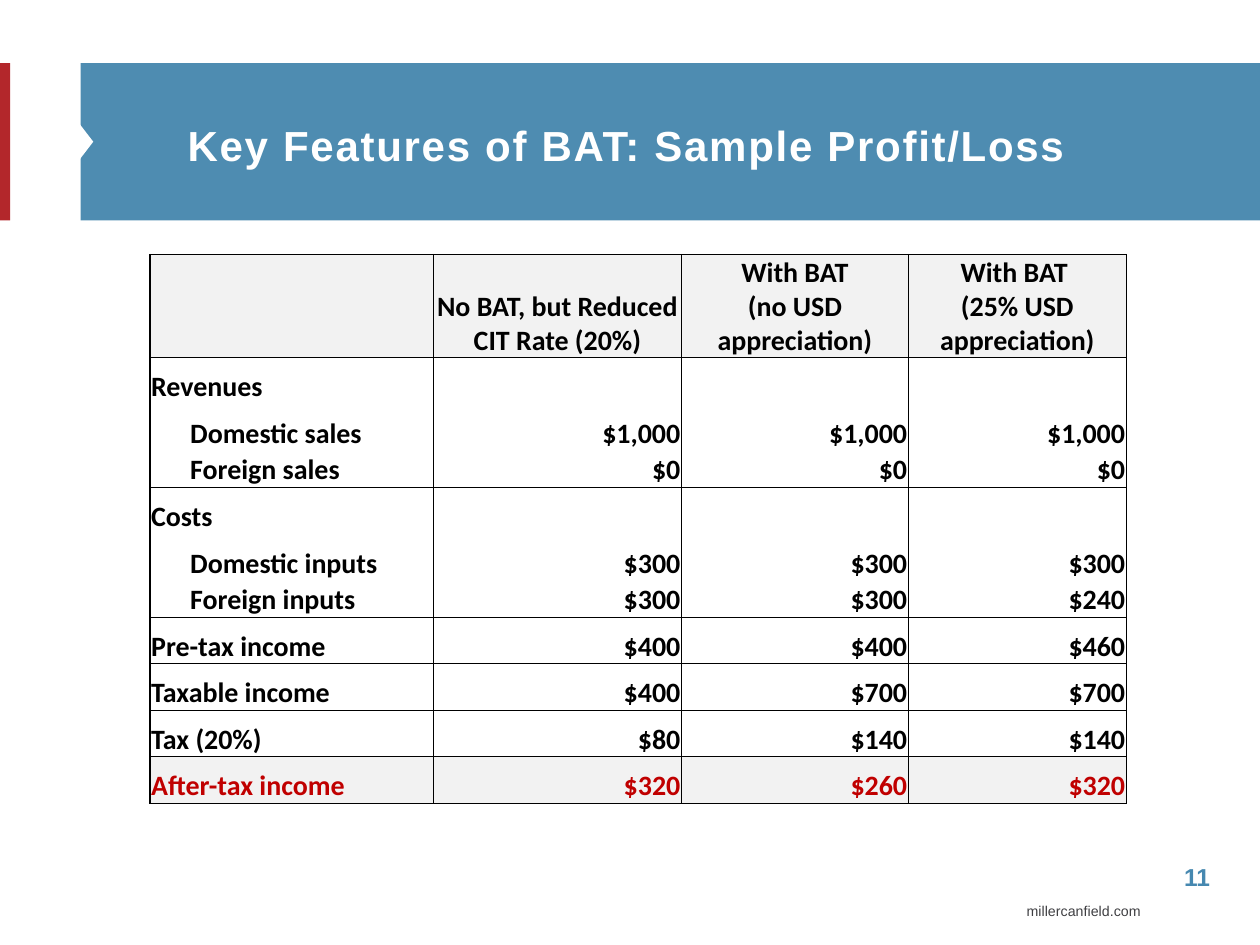
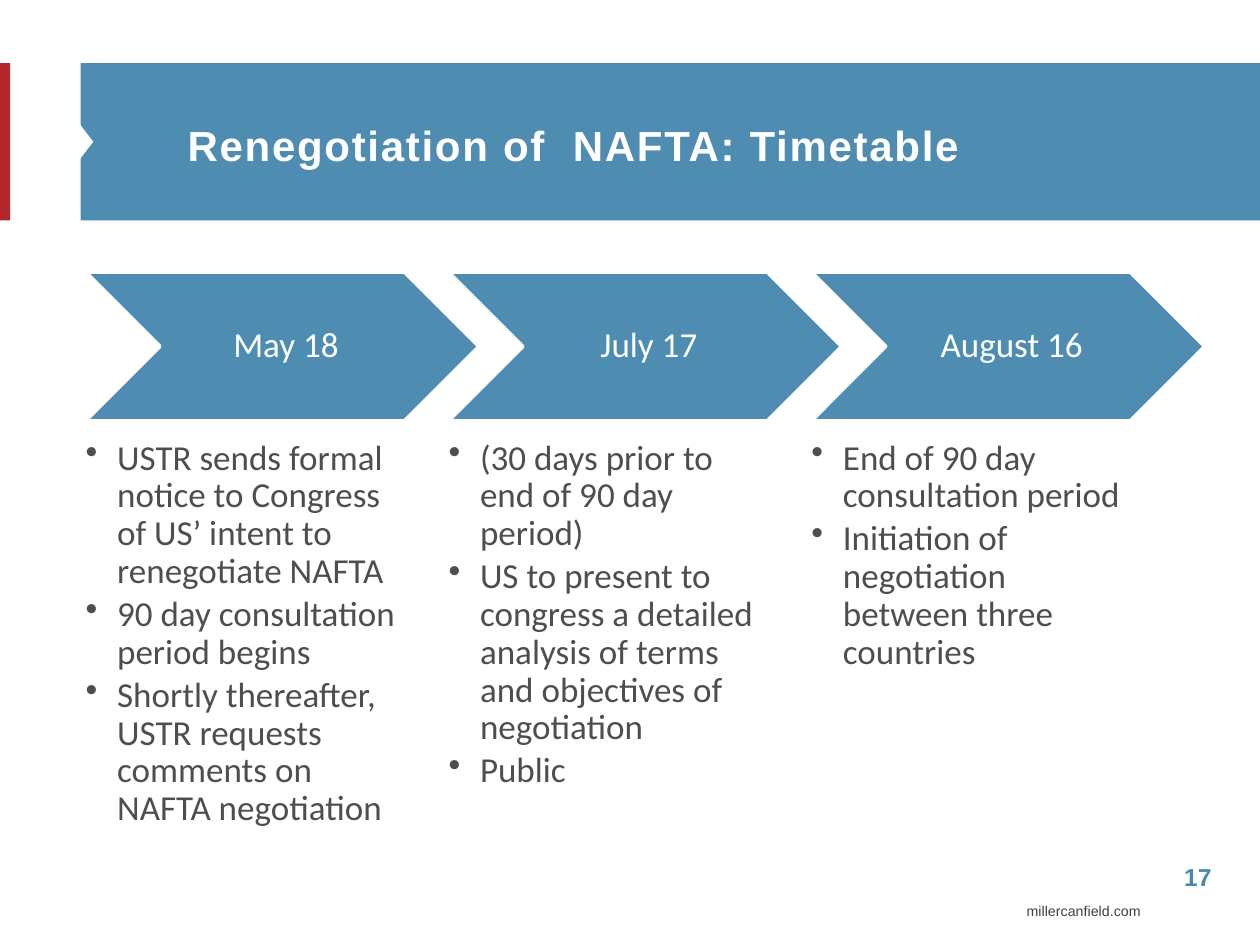
"""Build two tax and trade slides: a profit/loss table and a timetable of chevrons."""

from lxml.etree import SubElement
from pptx import Presentation
from pptx.dml.color import RGBColor
from pptx.enum.shapes import MSO_SHAPE
from pptx.enum.text import MSO_ANCHOR, PP_ALIGN
from pptx.oxml.ns import qn
from pptx.util import Inches, Pt

COLORS = {
    "band": "4E8CB1", "accent": "B3272B", "white": "FFFFFF", "number": "4688B0",
    "footer": "3F3F42", "body": "4D4E50", "black": "000000", "shade": "F2F2F2",
    "result": "C00000",
}
FOOTER = "millercanfield.com"

PROFIT_TITLE = "Key Features of BAT: Sample Profit/Loss"
PROFIT_HEADINGS = [
    "No BAT, but Reduced CIT Rate (20%)",
    "With BAT\v(no USD appreciation)",
    "With BAT \v(25% USD appreciation)",
]
# Each row: label, label column, columns spanned, values
PROFIT_ROWS = [
    ("", 0, 1, PROFIT_HEADINGS),
    ("Revenues", 0, 3, ["", "", ""]),
    ("Domestic sales", 1, 2, ["$1,000", "$1,000", "$1,000"]),
    ("Foreign sales", 1, 2, ["$0", "$0", "$0"]),
    ("Costs", 0, 2, ["", "", ""]),
    ("Domestic inputs", 1, 2, ["$300", "$300", "$300"]),
    ("Foreign inputs", 1, 2, ["$300", "$300", "$240"]),
    ("Pre-tax income", 0, 3, ["$400", "$400", "$460"]),
    ("Taxable income", 0, 3, ["$400", "$700", "$700"]),
    ("Tax (20%)", 0, 3, ["$80", "$140", "$140"]),
    ("After-tax income", 0, 3, ["$320", "$260", "$320"]),
]
COLUMN_WIDTHS = [0.31, 0.82, 1.12, 1.97, 1.8, 1.73]
ROW_HEIGHTS = [0.82, 0.37, 0.37, 0.29, 0.37, 0.37, 0.29, 0.37, 0.37, 0.37, 0.37]
RULED_ROWS = {0, 1, 4, 7, 8, 9, 10, 11}
RULED_COLUMNS = {0, 3, 4, 5, 6}
FIRST_VALUE_COLUMN = 3

TIMETABLE_TITLE = "Renegotiation of  NAFTA: Timetable"
TIMETABLE = [
    ("May 18", [
        "USTR sends formal notice to Congress of US’ intent to renegotiate NAFTA",
        "90 day consultation period begins",
        "Shortly thereafter, USTR requests comments on NAFTA negotiation",
    ]),
    ("July 17", [
        "(30 days prior to end of 90 day period)",
        "US to present to congress a detailed analysis of terms and objectives of negotiation",
        "Public",
    ]),
    ("August 16", [
        "End of 90 day consultation period",
        "Initiation of negotiation between three countries",
    ]),
]


def rgb(name):
    return RGBColor.from_string(COLORS[name])


def format_runs(paragraph, size, color, font="Arial", bold=False, **attributes):
    for run in paragraph.runs:
        run.font.size = Pt(size)
        run.font.name = font
        run.font.bold = bold
        run.font.color.rgb = rgb(color)
        for name, value in attributes.items():
            run.font._element.set(name, value)


def set_margins(target, left, top, right, bottom):
    target.margin_left, target.margin_top = Inches(left), Inches(top)
    target.margin_right, target.margin_bottom = Inches(right), Inches(bottom)


def add_block(slide, kind, left, top, width, height, fill):
    shape = slide.shapes.add_shape(
        kind, Inches(left), Inches(top), Inches(width), Inches(height))
    shape.shadow.inherit = False
    shape.fill.solid()
    shape.fill.fore_color.rgb = rgb(fill)
    shape.line.fill.background()
    return shape


def add_text(slide, left, top, width, height, text):
    box = slide.shapes.add_textbox(
        Inches(left), Inches(top), Inches(width), Inches(height))
    box.text_frame.word_wrap = True
    box.text_frame.text = text
    return box.text_frame


def add_framed_slide(presentation, title, number):
    slide = presentation.slides.add_slide(presentation.slide_layouts[6])
    add_block(slide, MSO_SHAPE.RECTANGLE, 0.64, 0.5, 9.36, 1.25, "band")
    notch = add_block(slide, MSO_SHAPE.ISOSCELES_TRIANGLE, 0.47, 1.05, 0.39, 0.15, "white")
    notch.rotation = 90
    add_block(slide, MSO_SHAPE.RECTANGLE, 0, 0.5, 0.08, 1.25, "accent")
    footer = add_text(slide, 8.05, 7.09, 1.64, 0.33, FOOTER)
    format_runs(footer.paragraphs[0], 14, "footer", baseline="30000")
    heading = add_text(slide, 1.39, 0.74, 8.18, 0.81, title)
    heading.vertical_anchor = MSO_ANCHOR.MIDDLE
    format_runs(heading.paragraphs[0], 24, "white", bold=True, spc="100")
    page = add_text(slide, 9.3, 6.79, 0.44, 0.4, str(number))
    format_runs(page.paragraphs[0], 14, "number", bold=True)
    return slide


def add_borders(cell, row, column):
    edges = [
        ("a:lnL", column in RULED_COLUMNS, column == 0),
        ("a:lnR", column + 1 in RULED_COLUMNS, column + 1 == len(COLUMN_WIDTHS)),
        ("a:lnT", row in RULED_ROWS, row == 0),
        ("a:lnB", row + 1 in RULED_ROWS, row + 1 == len(ROW_HEIGHTS)),
    ]
    properties = cell._tc.get_or_add_tcPr()
    for tag, ruled, outer in edges:
        line = SubElement(properties, qn(tag), w=str(Pt(1 if outer else 0.5)))
        if ruled:
            fill = SubElement(line, qn("a:solidFill"))
            SubElement(fill, qn("a:srgbClr"), val=COLORS["black"])
        else:
            SubElement(line, qn("a:noFill"))


def fill_cell(cell, text, alignment, color):
    cell.text_frame.text = text
    paragraph = cell.text_frame.paragraphs[0]
    paragraph.alignment = alignment
    format_runs(paragraph, 16, color, "Calibri", True)
    SubElement(paragraph._p, qn("a:endParaRPr"), sz="1600")


def add_profit_table(slide):
    table = slide.shapes.add_table(
        len(ROW_HEIGHTS), len(COLUMN_WIDTHS), Inches(1.19), Inches(2.02),
        Inches(sum(COLUMN_WIDTHS)), Inches(sum(ROW_HEIGHTS))).table
    table.first_row = table.horz_banding = False
    for column, width in zip(table.columns, COLUMN_WIDTHS):
        column.width = Inches(width)
    last_row = len(PROFIT_ROWS) - 1
    for row, (label, start, span, values) in enumerate(PROFIT_ROWS):
        table.rows[row].height = Inches(ROW_HEIGHTS[row])
        texts = [""] * FIRST_VALUE_COLUMN + values
        texts[start] = label
        for column, text in enumerate(texts):
            cell = table.cell(row, column)
            set_margins(cell, 0.01, 0.01, 0.01, 0)
            cell.vertical_anchor = MSO_ANCHOR.BOTTOM
            add_borders(cell, row, start + span - 1 if start == 0 and column == 0 and span == 0 else column)
            if row in (0, last_row):
                cell.fill.solid()
                cell.fill.fore_color.rgb = rgb("shade")
            else:
                cell.fill.background()
            if column < FIRST_VALUE_COLUMN:
                alignment = PP_ALIGN.LEFT
            else:
                alignment = PP_ALIGN.RIGHT if row else PP_ALIGN.CENTER
            fill_cell(cell, text, alignment, "result" if row == last_row else "black")
        if span > 1:
            table.cell(row, start).merge(table.cell(row, start + span - 1))


def add_bullets(slide, left, items):
    frame = add_text(slide, left, 3.49, 2.49, 3.25, "\n".join(items))
    set_margins(frame, 0, 0, 0, 0)
    for paragraph in frame.paragraphs:
        properties = paragraph._p.get_or_add_pPr()
        properties.set("marL", str(Inches(0.25)))
        properties.set("indent", str(-Inches(0.25)))
        SubElement(properties, qn("a:buChar"), char="•")
        paragraph.line_spacing = 0.9
        paragraph.space_after = Pt(3)
        format_runs(paragraph, 20, "body", "Calibri")


def add_timetable(slide):
    for index, (date, items) in enumerate(TIMETABLE):
        left = 0.68 + 2.88 * index
        chevron = add_block(slide, MSO_SHAPE.CHEVRON, left, 2.16, 3.12, 1.18, "band")
        chevron.line.color.rgb = rgb("white")
        chevron.line.width = Pt(2)
        frame = chevron.text_frame
        set_margins(frame, 0.09, 0.03, 0.03, 0.03)
        frame.vertical_anchor = MSO_ANCHOR.MIDDLE
        frame.text = date
        paragraph = frame.paragraphs[0]
        paragraph.alignment = PP_ALIGN.CENTER
        paragraph.line_spacing = 0.9
        format_runs(paragraph, 20, "white", "Calibri")
        add_bullets(slide, left, items)


def main():
    presentation = Presentation()
    presentation.slide_width, presentation.slide_height = Inches(10), Inches(7.5)
    add_profit_table(add_framed_slide(presentation, PROFIT_TITLE, 11))
    add_timetable(add_framed_slide(presentation, TIMETABLE_TITLE, 17))
    presentation.save("out.pptx")


if __name__ == "__main__":
    main()
